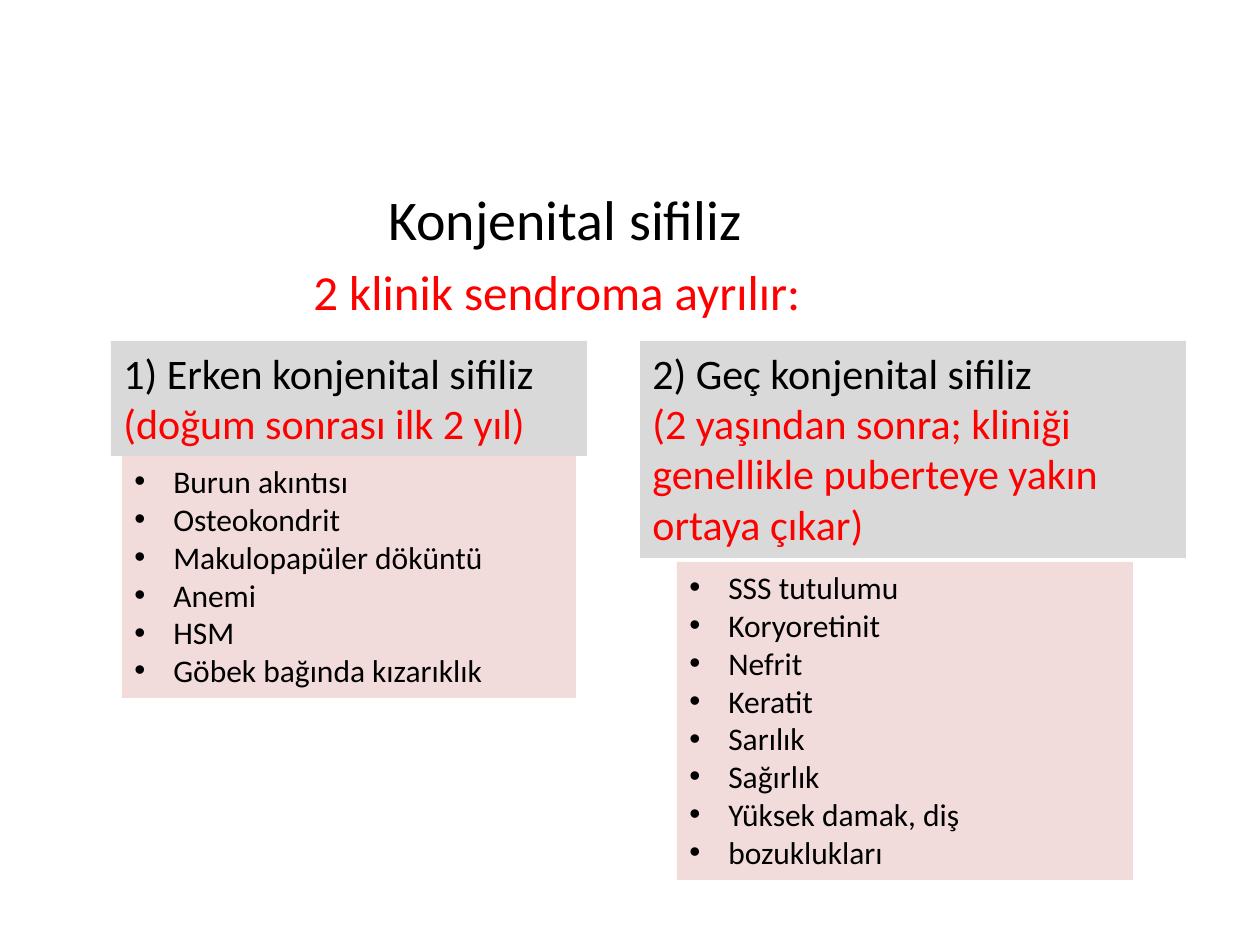
from lxml import etree
from pptx import Presentation
from pptx.dml.color import RGBColor
from pptx.enum.shapes import MSO_SHAPE
from pptx.enum.text import MSO_ANCHOR, PP_ALIGN
from pptx.oxml.ns import qn
from pptx.util import Emu, Pt

RECT = MSO_SHAPE.RECTANGLE
TOP = MSO_ANCHOR.TOP
LEFT, JUSTIFY = PP_ALIGN.LEFT, PP_ALIGN.JUSTIFY
FONT = "Calibri"
BLACK, RED, GREY, PINK = "000000", "FF0000", "D9D9D9", "F2DCDB"
BULLET_INDENT = 39


def px(n):
    """Turn px (126 to the inch) into EMU."""
    return Emu(round(n * 914400 / 126))


def color(value):
    return RGBColor.from_string(value)


def add_run(p, text, size, ink=BLACK):
    r = p.add_run()
    r.text = text
    r.font.name = FONT
    r.font.size = Pt(size)
    r.font.color.rgb = color(ink)


def set_indent(p, left, first=0):
    pPr = p._p.get_or_add_pPr()
    pPr.set("marL", str(px(left)))
    pPr.set("indent", str(px(first)))
    return pPr


def add_paragraph(tf, index):
    return tf.add_paragraph() if index else tf.paragraphs[0]


def add_panel(slide, box, fill):
    """Add a filled rectangle and return its text frame."""
    sp = slide.shapes.add_shape(RECT, *map(px, box))
    sp.shadow.inherit = False
    sp.fill.solid()
    sp.fill.fore_color.rgb = color(fill)
    sp.line.fill.background()
    tf = sp.text_frame
    tf.word_wrap = True
    tf.vertical_anchor = TOP
    return tf


def add_title(slide, box, lines):
    tf = slide.shapes.add_textbox(*map(px, box)).text_frame
    tf.word_wrap = True
    for i, (text, size, ink, indent) in enumerate(lines):
        p = add_paragraph(tf, i)
        set_indent(p, indent)
        if i:
            p.space_before = Pt(6)
        add_run(p, text, size, ink)


def add_heading(slide, box, paragraphs):
    tf = add_panel(slide, box, GREY)
    for i, runs in enumerate(paragraphs):
        p = add_paragraph(tf, i)
        p.alignment = LEFT
        for text, ink in runs:
            add_run(p, text, 24, ink)


def add_findings(slide, box, items, align):
    tf = add_panel(slide, box, PINK)
    for i, item in enumerate(items):
        p = add_paragraph(tf, i)
        p.alignment = align
        pPr = set_indent(p, BULLET_INDENT, -BULLET_INDENT)
        etree.SubElement(pPr, qn("a:buFont")).set("typeface", "Arial")
        etree.SubElement(pPr, qn("a:buChar")).set("char", "•")
        add_run(p, item, 18)


def main():
    prs = Presentation()
    prs.slide_width, prs.slide_height = px(1260), px(945)
    slide = prs.slides.add_slide(prs.slide_layouts[6])

    add_title(slide, (73, 178, 1134, 624), [
        ("Konjenital sifiliz", 32, BLACK, 303),
        ("2 klinik sendroma ayrılır:", 28, RED, 228),
    ])
    add_heading(slide, (111, 341, 476, 115), [
        [("1) Erken konjenital sifiliz ", BLACK),
         ("(doğum sonrası ilk 2 yıl)", RED)],
    ])
    add_heading(slide, (640, 341, 546, 217), [
        [("2) Geç konjenital sifiliz", BLACK)],
        [("(2 yaşından sonra; kliniği genellikle puberteye yakın "
          "ortaya çıkar)", RED)],
    ])
    add_findings(slide, (677, 562, 456, 318), [
        "SSS tutulumu", "Koryoretinit", "Nefrit", "Keratit", "Sarılık",
        "Sağırlık", "Yüksek damak, diş", "bozuklukları",
    ], JUSTIFY)
    add_findings(slide, (122, 456, 454, 242), [
        "Burun akıntısı", "Osteokondrit", "Makulopapüler döküntü",
        "Anemi", "HSM", "Göbek bağında kızarıklık",
    ], LEFT)

    prs.save("out.pptx")


if __name__ == "__main__":
    main()
